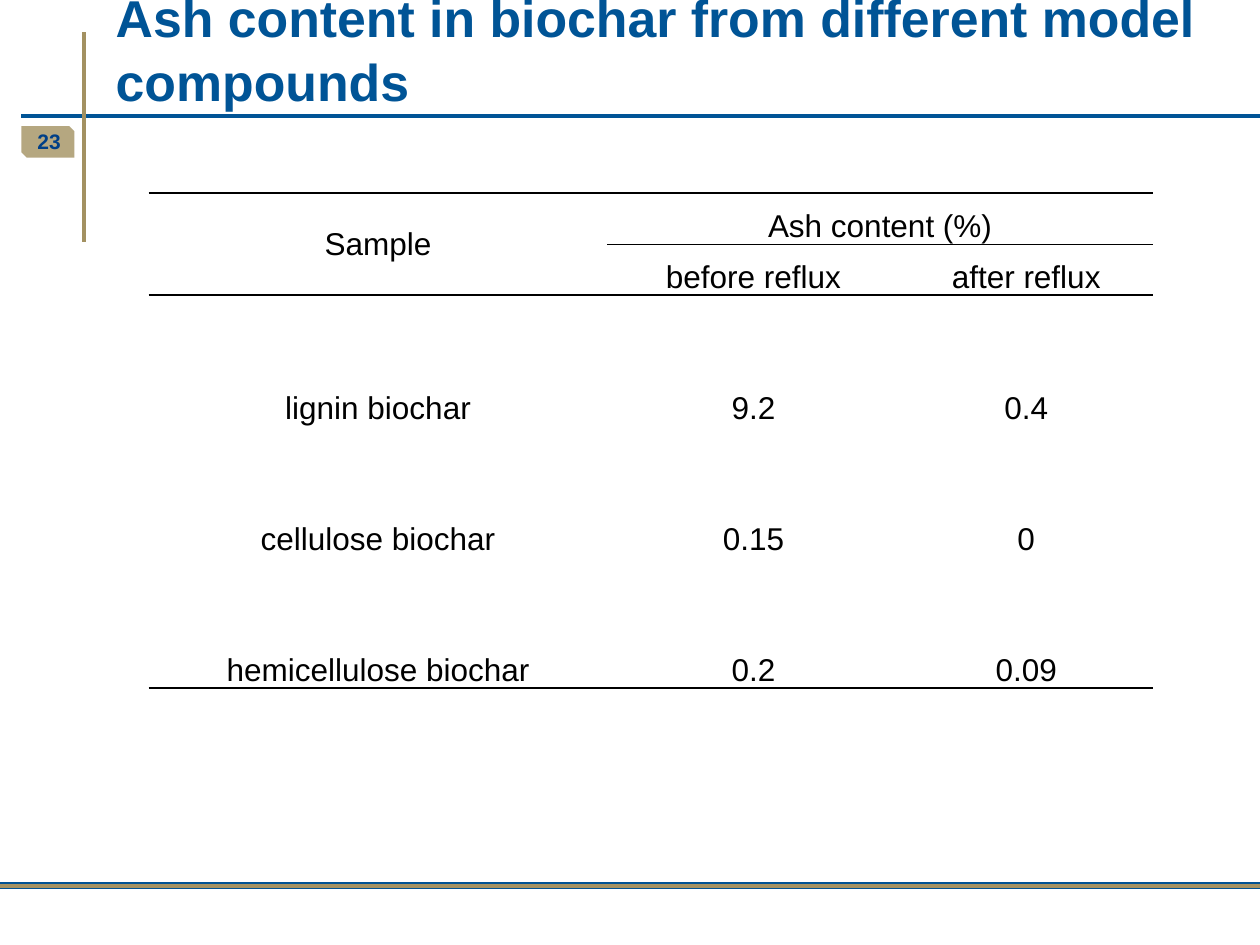
from typing import NamedTuple

from lxml.etree import SubElement
from pptx import Presentation
from pptx.dml.color import RGBColor
from pptx.enum.shapes import MSO_CONNECTOR as Connector, MSO_SHAPE as Shape
from pptx.enum.text import MSO_ANCHOR as Anchor, PP_ALIGN as Align
from pptx.oxml.ns import qn
from pptx.util import Inches, Pt

COLORS = {"blue": "005496", "footer": "005293", "number": "003F87",
          "tan": "A39161", "black": "000000"}
COLUMN_WIDTHS = (3.64, 2.32, 2.01)
ROW_HEIGHTS = (0.41, 0.4, 1.04, 1.04, 1.04)
ROWS = (
    ("Sample", "Ash content (%)", ""),
    ("", "before reflux", "after reflux"),
    ("lignin biochar", "9.2", "0.4"),
    ("cellulose biochar", "0.15", "0"),
    ("hemicellulose biochar", "0.2", "0.09"),
)


class Rule(NamedTuple):
    start: tuple[float, float]
    end: tuple[float, float]
    color: str
    width: float


class Label(NamedTuple):
    text: str
    box: tuple[float, float, float, float]
    size: float
    color: str
    align: Align
    anchor: Anchor
    spacing: float


RULES = (
    Rule((0.17, 0.92), (10, 0.92), "blue", 2),
    Rule((0.67, 1.92), (0.67, 0.25), "tan", 2.25),
    Rule((0, 7.03), (10, 7.03), "footer", 4),
    Rule((0, 7.03), (10, 7.03), "tan", 2),
)
LABELS = (
    Label("23", (0, 0.92, 0.58, 0.4), 12, "number", Align.RIGHT, Anchor.MIDDLE, 1),
    Label("Ash content in biochar from different model compounds",
          (0.82, 0.02, 8.93, 0.92), 29.6, "blue", Align.LEFT, Anchor.BOTTOM, 1.04),
)


def rgb(name: str) -> RGBColor:
    """Return the named palette colour."""
    return RGBColor.from_string(COLORS[name])


def draw_tab(slide) -> None:
    """Draw the translucent tab behind the slide number."""
    tab = slide.shapes.add_shape(Shape.SNIP_2_DIAG_RECTANGLE, Inches(0.17),
                                 Inches(1), Inches(0.42), Inches(0.25))
    tab.shadow.inherit = False
    tab.line.fill.background()
    tab.fill.solid()
    tab.fill.fore_color.rgb = rgb("tan")
    color = tab.fill._xPr.find(f".//{qn('a:srgbClr')}")
    SubElement(color, qn("a:alpha"), val="80000")


def draw_rule(slide, rule: Rule) -> None:
    """Draw one straight rule without a shadow."""
    points = [Inches(value) for value in (*rule.start, *rule.end)]
    line = slide.shapes.add_connector(Connector.STRAIGHT, *points)
    line.line.color.rgb = rgb(rule.color)
    line.line.width = Pt(rule.width)
    SubElement(line._element.spPr, qn("a:effectLst"))


def draw_label(slide, label: Label) -> None:
    """Draw one bold text box."""
    box = slide.shapes.add_textbox(*map(Inches, label.box))
    frame = box.text_frame
    frame.word_wrap = True
    frame.vertical_anchor = label.anchor
    frame.text = label.text
    paragraph = frame.paragraphs[0]
    paragraph.alignment = label.align
    paragraph.line_spacing = label.spacing
    font = paragraph.runs[0].font
    font.name, font.size, font.bold = "Arial", Pt(label.size), True
    font.color.rgb = rgb(label.color)


def set_borders(cell, ruled: set[str]) -> None:
    """Rule the given sides of a cell and clear the others."""
    properties = cell._tc.get_or_add_tcPr()
    for side in "LRTB":
        line = SubElement(properties, qn(f"a:ln{side}"), w=str(Pt(1)))
        if side in ruled:
            fill = SubElement(line, qn("a:solidFill"))
            SubElement(fill, qn("a:srgbClr"), val=COLORS["black"])
        else:
            SubElement(line, qn("a:noFill"))


def ruled_sides(row: int, column: int) -> set[str]:
    """Return the sides of a cell that carry a rule."""
    above = row in (0, 2) or (row == 1 and column > 0)
    below = row in (1, 4) or (row == 0 and column > 0)
    return {side for side, shown in (("T", above), ("B", below)) if shown}


def fill_cell(cell, text: str, anchor: Anchor) -> None:
    """Write and format the text of a cell."""
    cell.fill.background()
    cell.margin_left = cell.margin_right = Inches(0.05)
    cell.margin_top = cell.margin_bottom = 0
    cell.vertical_anchor = anchor
    cell.text_frame.text = text
    paragraph = cell.text_frame.paragraphs[0]
    paragraph.alignment = Align.CENTER
    paragraph.line_spacing = 1.07
    paragraph.font.size = Pt(18)
    for run in paragraph.runs:
        run.font.name, run.font.size = "Arial", Pt(18)
        run.font.color.rgb = rgb("black")


def draw_table(slide) -> None:
    """Draw the ash content table."""
    frame = slide.shapes.add_table(len(ROWS), len(COLUMN_WIDTHS), Inches(1.18), Inches(1.53),
                                   Inches(sum(COLUMN_WIDTHS)), Inches(sum(ROW_HEIGHTS)))
    table = frame.table
    table.first_row = table.horz_banding = False
    for column, width in zip(table.columns, COLUMN_WIDTHS):
        column.width = Inches(width)
    for row, height in zip(table.rows, ROW_HEIGHTS):
        row.height = Inches(height)
    for row, texts in enumerate(ROWS):
        for column, text in enumerate(texts):
            cell = table.cell(row, column)
            set_borders(cell, ruled_sides(row, column))
            fill_cell(cell, text, Anchor.MIDDLE if text == "Sample" else Anchor.BOTTOM)
    table.cell(0, 0).merge(table.cell(1, 0))
    table.cell(0, 1).merge(table.cell(0, 2))


def main() -> None:
    """Build and save the slide."""
    presentation = Presentation()
    presentation.slide_width, presentation.slide_height = Inches(10), Inches(7.5)
    slide = presentation.slides.add_slide(presentation.slide_layouts[6])
    draw_tab(slide)
    for rule in RULES:
        draw_rule(slide, rule)
    draw_table(slide)
    for label in LABELS:
        draw_label(slide, label)
    presentation.save("out.pptx")


if __name__ == "__main__":
    main()
